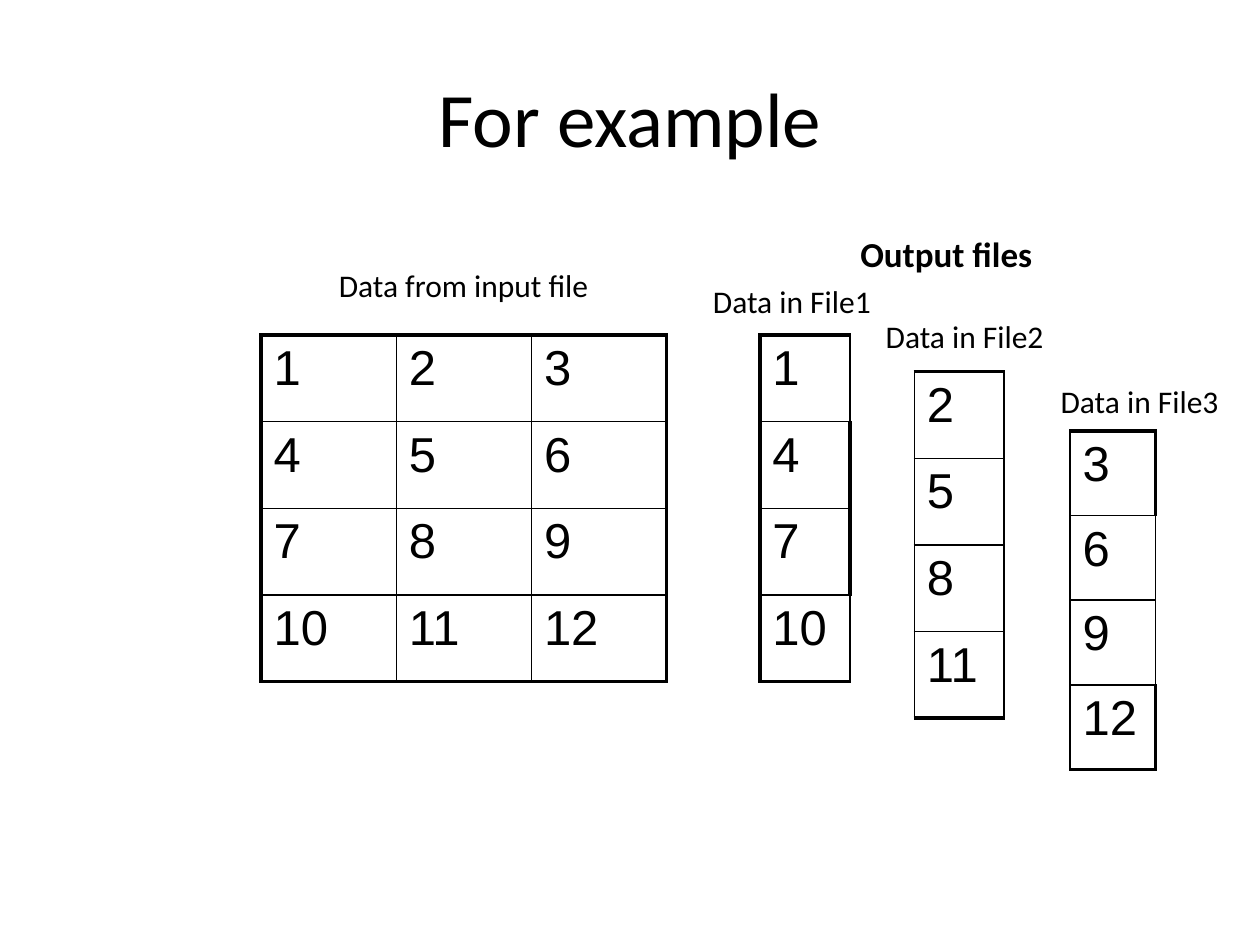
from lxml import etree
from pptx import Presentation
from pptx.dml.color import RGBColor
from pptx.enum import text
from pptx.oxml import ns
from pptx.util import Pt

BLACK = "000000"
THIN, THICK = 1, 2.25

TITLE = "For example"
HEADING = ("Output files", (484.5, 129.6, 134, 31))

# right: line widths of the right edge, row by row
TABLES = [
    {"label": "Data from input file", "label_at": (186.5, 148.3, 168, 29),
     "rows": [(1, 2, 3), (4, 5, 6), (7, 8, 9), (10, 11, 12)],
     "at": (149.2, 191.5), "cell": (77.25, 49.5),
     "left": THICK, "right": [THICK] * 4},
    {"label": "Data in File1", "label_at": (400.3, 157.7, 121, 29),
     "rows": [(1,), (4,), (7,), (10,)],
     "at": (434.2, 191.5), "cell": (51.4, 49.5),
     "left": THICK, "right": [THIN, THICK, THICK, THIN]},
    {"label": "Data in File2", "label_at": (499, 177.8, 121, 29),
     "rows": [(2,), (5,), (8,), (11,)],
     "at": (522.5, 212.4), "cell": (51.2, 49.5),
     "left": THIN, "right": [THIN] * 4},
    {"label": "Data in File3", "label_at": (599, 214.6, 121, 29),
     "rows": [(3,), (6,), (9,), (12,)],
     "at": (611.5, 246.2), "cell": (48.75, 48.4),
     "left": THIN, "right": [THICK, THIN, THIN, THICK]},
]


def color(hex_code):
    return RGBColor.from_string(hex_code)


def write(frame, words, size, font="Calibri", bold=False, align=text.PP_ALIGN.LEFT):
    para = frame.paragraphs[0]
    para.alignment = align
    span = para.add_run()
    span.text = words
    span.font.size = Pt(size)
    span.font.name = font
    span.font.bold = bold
    span.font.color.rgb = color(BLACK)


def add_label(page, words, at, **style):
    frame = page.shapes.add_textbox(*map(Pt, at)).text_frame
    frame.word_wrap = True
    frame.auto_size = text.MSO_AUTO_SIZE.SHAPE_TO_FIT_TEXT
    write(frame, words, **style)


def set_borders(cell, **widths):
    """Draw the cell's edges; keywords L, R, T and B give line widths in points."""
    properties = cell._tc.get_or_add_tcPr()
    for side, width in widths.items():
        line = etree.SubElement(properties, ns.qn(f"a:ln{side}"), w=str(Pt(width)))
        fill = etree.SubElement(line, ns.qn("a:solidFill"))
        etree.SubElement(fill, ns.qn("a:srgbClr"), val=BLACK)


def add_grid(page, rows, at, cell_size, left, right):
    width, height = cell_size
    last_row, last_column = len(rows) - 1, len(rows[0]) - 1
    size = (width * len(rows[0]), height * len(rows))
    grid = page.shapes.add_table(len(rows), len(rows[0]), *map(Pt, at + size)).table
    grid.first_row = grid.horz_banding = False
    for column in grid.columns:
        column.width = Pt(width)
    for r, values in enumerate(rows):
        grid.rows[r].height = Pt(height)
        for c, value in enumerate(values):
            cell = grid.cell(r, c)
            write(cell.text_frame, str(value), 28, font="Arial")
            set_borders(cell,
                        L=left if c == 0 else THIN,
                        R=right[r] if c == last_column else THIN,
                        T=THICK if r == 0 else THIN,
                        B=THICK if r == last_row else THIN)
            cell.fill.background()


def main():
    deck = Presentation()
    deck.slide_width, deck.slide_height = Pt(720), Pt(540)
    page = deck.slides.add_slide(deck.slide_layouts[5])

    title = page.shapes.title
    title.left, title.top, title.width, title.height = map(Pt, (36, 21.6, 648, 90))
    title.text_frame.vertical_anchor = text.MSO_ANCHOR.MIDDLE
    write(title.text_frame, TITLE, 44, align=text.PP_ALIGN.CENTER)

    for item in TABLES:
        add_grid(page, item["rows"], item["at"], item["cell"], item["left"], item["right"])
        add_label(page, item["label"], item["label_at"], size=18)
    add_label(page, *HEADING, size=20, bold=True)

    deck.save("out.pptx")


if __name__ == "__main__":
    main()
